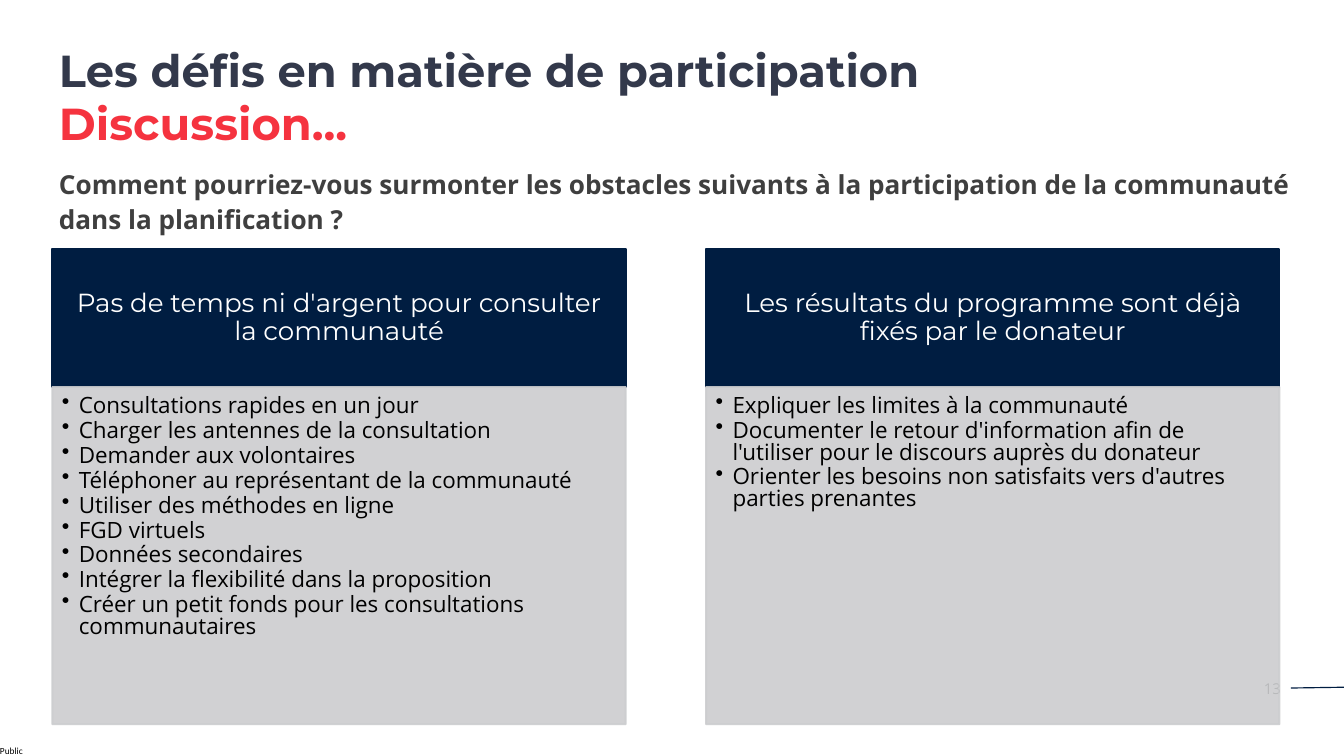
from lxml.etree import SubElement
from pptx import Presentation
from pptx.dml.color import RGBColor
from pptx.enum.shapes import MSO_CONNECTOR, MSO_SHAPE
from pptx.enum.text import MSO_ANCHOR, PP_ALIGN
from pptx.oxml.ns import qn
from pptx.util import Cm, Pt

NAVY = RGBColor(0x00, 0x1D, 0x41)
GREY = RGBColor(0xCC, 0xCD, 0xCF)
SLATE = RGBColor(0x33, 0x39, 0x4B)
RED = RGBColor(0xF5, 0x33, 0x3F)
DARK = RGBColor(0x3F, 0x3F, 0x3F)
BLACK = RGBColor(0, 0, 0)
WHITE = RGBColor(0xFF, 0xFF, 0xFF)

HEAD, BODY = "Montserrat", "Open Sans"

# Panel grid, in centimetres
LEFT, STEP, WIDTH = 1.98, 24.71, 21.67
TOP, HEAD_H, BODY_H = 9.42, 5.21, 12.75

PANELS = [
    ("Pas de temps ni d'argent pour consulter la communauté", [
        "Consultations rapides en un jour",
        "Charger les antennes de la consultation",
        "Demander aux volontaires",
        "Téléphoner au représentant de la communauté",
        "Utiliser des méthodes en ligne",
        "FGD virtuels",
        "Données secondaires",
        "Intégrer la flexibilité dans la proposition",
        "Créer un petit fonds pour les consultations communautaires",
    ]),
    ("Les résultats du programme sont déjà fixés par le donateur", [
        "Expliquer les limites à la communauté",
        "Documenter le retour d'information afin de l'utiliser "
        "pour le discours auprès du donateur",
        "Orienter les besoins non satisfaits vers d'autres parties prenantes",
    ]),
]


def set_frame(frame, pads, anchor=MSO_ANCHOR.TOP, wrap=True):
    frame.word_wrap = wrap
    frame.vertical_anchor = anchor
    (frame.margin_left, frame.margin_top,
     frame.margin_right, frame.margin_bottom) = [Cm(pad) for pad in pads]


def add_line(frame, text, size, font, color, bold=False,
             align=PP_ALIGN.LEFT, space=None, after=None, bullet=False):
    """Fill the empty first paragraph, or append a new one."""
    para = frame.paragraphs[0]
    if para.runs:
        para = frame.add_paragraph()
    para.alignment = align
    if space:
        para.line_spacing = space
    if after:
        para.space_after = Pt(after)
    if bullet:
        props = para._p.get_or_add_pPr()
        props.set("marL", str(Cm(0.64)))
        props.set("indent", str(-Cm(0.64)))
        SubElement(props, qn("a:buChar"), char="•")
    run = para.add_run()
    run.text = text
    run.font.size = Pt(size)
    run.font.name = font
    run.font.bold = bold
    run.font.color.rgb = color


def add_text(slide, x, y, w, h, pads=(0.25, 0.13, 0.25, 0.13), wrap=True):
    box = slide.shapes.add_textbox(Cm(x), Cm(y), Cm(w), Cm(h))
    set_frame(box.text_frame, pads, wrap=wrap)
    return box.text_frame


def add_block(slide, x, y, h, color, alpha=None):
    block = slide.shapes.add_shape(
        MSO_SHAPE.RECTANGLE, Cm(x), Cm(y), Cm(WIDTH), Cm(h))
    block.shadow.inherit = False
    block.fill.solid()
    block.fill.fore_color.rgb = color
    block.line.color.rgb = color
    block.line.width = Pt(2)
    if alpha:
        for tone in block._element.spPr.iter(qn("a:srgbClr")):
            SubElement(tone, qn("a:alpha"), val=str(alpha * 1000))
    return block.text_frame


def add_panel(slide, x, title, items):
    frame = add_block(slide, x, TOP, HEAD_H, NAVY)
    set_frame(frame, (0.56, 0.3, 0.56, 0.3), MSO_ANCHOR.MIDDLE)
    add_line(frame, title, 28, HEAD, WHITE, align=PP_ALIGN.CENTER, space=0.9)

    frame = add_block(slide, x, TOP + HEAD_H, BODY_H, GREY, alpha=90)
    set_frame(frame, (0.36, 0.36, 0.48, 0.53))
    for item in items:
        add_line(frame, item, 24, BODY, BLACK, space=0.8, after=3.6,
                 bullet=True)


def add_rule(slide, x1, y1, x2, y2):
    rule = slide.shapes.add_connector(
        MSO_CONNECTOR.STRAIGHT, Cm(x1), Cm(y1), Cm(x2), Cm(y2))
    rule.line.color.rgb = NAVY
    rule.line.width = Pt(1.25)
    SubElement(rule._element.spPr, qn("a:effectLst"))


def main():
    deck = Presentation()
    deck.slide_width, deck.slide_height = Cm(50.8), Cm(28.58)
    slide = deck.slides.add_slide(deck.slide_layouts[6])

    # Footer: label, page number and rule
    label = add_text(slide, 0, 28.17, 0.94, 0.43, (0, 0, 0, 0), wrap=False)
    add_line(label, "Public", 10, "Calibri", BLACK)
    number = add_text(slide, 46.84, 25.55, 1.83, 0.94)
    add_line(number, "13", 16, BODY, BLACK, align=PP_ALIGN.RIGHT)
    add_rule(slide, 48.79, 26.01, 50.8, 25.98)

    # Title and question
    title = add_text(slide, LEFT, 1.47, 35.94, 4.37)
    add_line(title, "Les défis en matière de participation", 48, HEAD, SLATE,
             bold=True)
    add_line(title, "Discussion...", 48, HEAD, RED, bold=True)
    question = add_text(slide, LEFT, 6.1, 48.34, 3.4)
    add_line(question, "Comment pourriez-vous surmonter les obstacles suivants "
             "à la participation de la communauté dans la planification ?",
             28, BODY, DARK, bold=True, space=1.12)

    # Two panels side by side
    for col, (head, items) in enumerate(PANELS):
        add_panel(slide, LEFT + col * STEP, head, items)

    deck.save("out.pptx")


if __name__ == "__main__":
    main()
